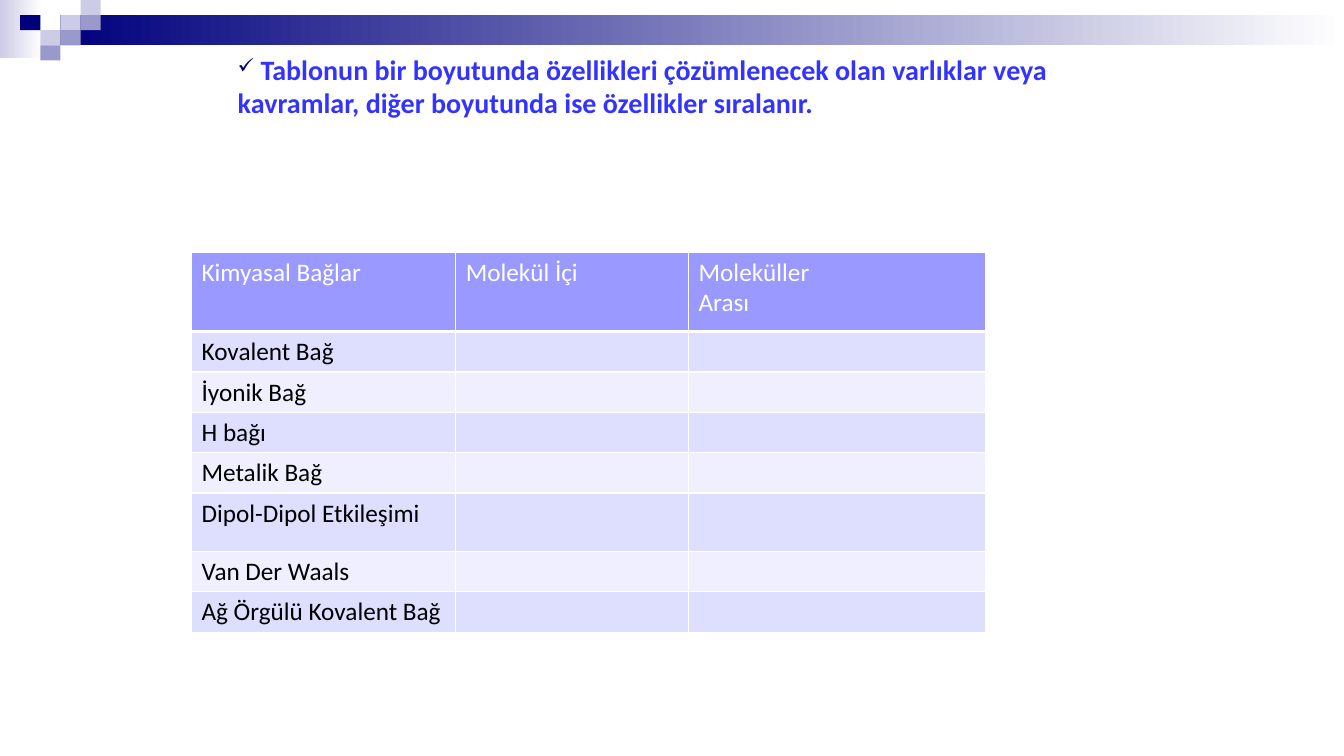
from lxml import etree
from pptx import Presentation
from pptx.dml.color import RGBColor
from pptx.enum.shapes import MSO_SHAPE
from pptx.enum.text import MSO_ANCHOR
from pptx.oxml.ns import qn
from pptx.util import Inches, Pt

RECTANGLE = MSO_SHAPE.RECTANGLE
TOP = MSO_ANCHOR.TOP
FONT = "Calibri"
NAVY, LAVENDER, MAUVE, WHITE = "00007D", "CCCCE6", "9999CC", "FFFFFF"
HEADER_FILL, BAND_FILLS = "9999FF", ("DEDEFF", "EFEFFF")

HEADING = (" Tablonun bir boyutunda özellikleri çözümlenecek olan varlıklar veya "
           "kavramlar, diğer boyutunda ise özellikler sıralanır.")
HEADERS = ["Kimyasal Bağlar", "Molekül İçi", "Moleküller\nArası"]
BONDS = ["Kovalent Bağ", "İyonik Bağ", "H bağı", "Metalik Bağ",
         "Dipol-Dipol Etkileşimi", "Van Der Waals", "Ağ Örgülü Kovalent Bağ"]
COLUMN_WIDTHS = [2.62, 2.31, 2.95]
ROW_HEIGHTS = [0.79, 0.4, 0.4, 0.4, 0.4, 0.58, 0.4, 0.4]

# Column, row and colour of each square in the corner mosaic
SQUARES = [(3, 1, LAVENDER), (4, 0, LAVENDER), (4, 1, MAUVE), (2, 2, LAVENDER),
           (1, 1, NAVY), (3, 2, MAUVE), (2, 3, MAUVE)]


def color(value):
    return RGBColor.from_string(value)


def format_font(font, **values):
    font.color.rgb = color(values.pop("color"))
    for name, value in values.items():
        setattr(font, name, value)


def add_block(page, box, *colors):
    """Add a borderless rectangle: one colour is solid, two make a gradient."""
    block = page.shapes.add_shape(RECTANGLE, *map(Inches, box))
    block.shadow.inherit = False
    block.line.fill.background()
    if len(colors) == 1:
        block.fill.solid()
        block.fill.fore_color.rgb = color(colors[0])
    else:
        block.fill.gradient()
        block.fill.gradient_angle = 0
        for stop, value in zip(block.fill.gradient_stops, colors):
            stop.color.rgb = color(value)


def add_banner(page, box):
    left, top, width, _ = box
    cell_width, cell_height = 0.2, 0.15
    # Fading strips
    add_block(page, (left, top, 0.42, 0.58), LAVENDER, WHITE)
    bar_left = 3 * cell_width
    add_block(page, (left + bar_left, top + cell_height, width - bar_left, 2 * cell_height),
              NAVY, WHITE)
    # Corner mosaic
    for column, row, value in SQUARES:
        add_block(page, (left + column * cell_width, top + row * cell_height,
                         cell_width, cell_height), value)


def add_check_bullet(para):
    properties = para._p.get_or_add_pPr()
    properties.set("marL", "0")
    properties.set("indent", "0")
    bullet_color = etree.SubElement(properties, qn("a:buClr"))
    etree.SubElement(bullet_color, qn("a:srgbClr"), val=NAVY)
    etree.SubElement(properties, qn("a:buSzPct"), val="75000")
    etree.SubElement(properties, qn("a:buChar"), char="✓")


def add_heading(page, box):
    frame = page.shapes.add_textbox(*map(Inches, box)).text_frame
    frame.word_wrap = True
    frame.vertical_anchor = TOP
    para = frame.paragraphs[0]
    add_check_bullet(para)
    span = para.add_run()
    span.text = HEADING
    format_font(span.font, name=FONT, size=Pt(20), bold=True, color="3333FF")


def set_borders(cell, bottom):
    properties = cell._tc.get_or_add_tcPr()
    for side, width in {"lnL": 1, "lnR": 1, "lnT": 1, "lnB": bottom}.items():
        line = etree.SubElement(properties, qn(f"a:{side}"), w=str(Pt(width)))
        fill = etree.SubElement(line, qn("a:solidFill"))
        etree.SubElement(fill, qn("a:srgbClr"), val=WHITE)


def fill_cell(cell, text, fill, text_color, bottom):
    set_borders(cell, bottom)
    cell.fill.solid()
    cell.fill.fore_color.rgb = color(fill)
    cell.text = text
    for para in cell.text_frame.paragraphs:
        format_font(para.font, name=FONT, size=Pt(18), bold=False, color=text_color)
        for span in para.runs:
            format_font(span.font, name=FONT, size=Pt(18), bold=False, color=text_color)


def add_bond_table(page, box):
    rows = [HEADERS] + [[bond, "", ""] for bond in BONDS]
    table = page.shapes.add_table(len(rows), len(HEADERS), *map(Inches, box)).table
    for column, width in zip(table.columns, COLUMN_WIDTHS):
        column.width = Inches(width)
    for row, height in zip(table.rows, ROW_HEIGHTS):
        row.height = Inches(height)
    for row_index, texts in enumerate(rows):
        if row_index == 0:
            style = (HEADER_FILL, WHITE, 3)
        else:
            style = (BAND_FILLS[(row_index - 1) % 2], "000000", 1)
        for column_index, text in enumerate(texts):
            fill_cell(table.cell(row_index, column_index), text, *style)


def main():
    deck = Presentation()
    deck.slide_width, deck.slide_height = Inches(13.33), Inches(7.5)
    page = deck.slides.add_slide(deck.slide_layouts[6])
    add_banner(page, (0, 0, 13.33, 0.6))
    add_heading(page, (2.26, 0.47, 8.5, 1.86))
    add_bond_table(page, (1.9, 2.5, sum(COLUMN_WIDTHS), sum(ROW_HEIGHTS)))
    deck.save("out.pptx")


if __name__ == "__main__":
    main()
